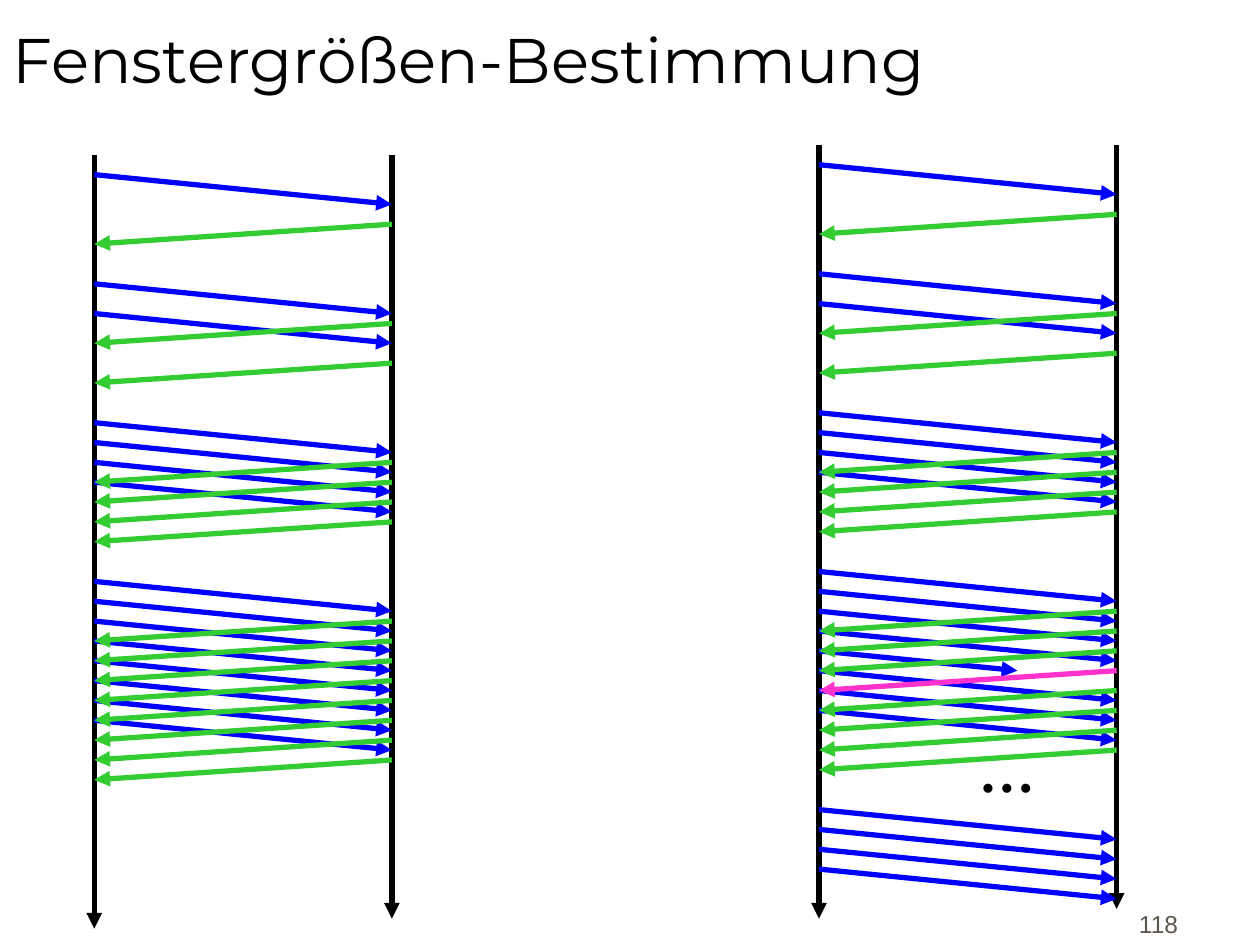
from dataclasses import dataclass

from lxml.etree import SubElement
from pptx import Presentation
from pptx.dml.color import RGBColor
from pptx.enum.shapes import MSO_CONNECTOR
from pptx.enum.text import MSO_ANCHOR, PP_ALIGN
from pptx.oxml.ns import qn
from pptx.util import Cm, Pt


@dataclass(frozen=True)
class Theme:
    black: RGBColor = RGBColor(0x00, 0x00, 0x00)
    data: RGBColor = RGBColor(0x00, 0x00, 0xFF)
    acknowledgement: RGBColor = RGBColor(0x33, 0xCC, 0x33)
    duplicate: RGBColor = RGBColor(0xFF, 0x33, 0xCC)
    number: RGBColor = RGBColor(0x5E, 0x57, 0x4E)
    title_size: Pt = Pt(36)
    ellipsis_size: Pt = Pt(32)
    number_size: Pt = Pt(14)
    line_width: Pt = Pt(3)


theme = Theme()


def add_arrow(shapes, start, end, color):
    arrow = shapes.add_connector(
        MSO_CONNECTOR.STRAIGHT, Cm(start[0]), Cm(start[1]), Cm(end[0]), Cm(end[1])
    )
    arrow.line.color.rgb = color
    arrow.line.width = theme.line_width
    SubElement(arrow.line._get_or_add_ln(), qn("a:tailEnd"), type="triangle")
    SubElement(arrow._element.spPr, qn("a:effectLst"))


def format_text(shape, text, font_name, size, color, alignment, anchor):
    frame = shape.text_frame
    frame.word_wrap = True
    frame.vertical_anchor = anchor
    paragraph = frame.paragraphs[0]
    paragraph.text = text
    paragraph.alignment = alignment
    paragraph.font.name = font_name
    paragraph.font.size = size
    paragraph.font.color.rgb = color
    return paragraph


presentation = Presentation()
presentation.slide_width = Cm(25.4)
presentation.slide_height = Cm(19.05)
slide = presentation.slides.add_slide(presentation.slide_layouts[5])

title = slide.shapes.title
title.left, title.top, title.width, title.height = Cm(0), Cm(0), Cm(25.4), Cm(3.53)
format_text(title, "Fenstergrößen-Bestimmung", "Montserrat", theme.title_size,
            theme.black, PP_ALIGN.LEFT, MSO_ANCHOR.BOTTOM)
title.text_frame.margin_bottom = Cm(1.6)

channel_width = 6
packet_gap = 0.4
data_drop = 0.6
acknowledgement_drop = 0.4
bursts = [
    ([0.4], [1.4]),
    ([2.6, 3.2], [3.4, 4.2]),
    ([5.4 + packet_gap * i for i in range(4)], [6.2 + packet_gap * i for i in range(4)]),
    ([8.6 + packet_gap * i for i in range(8)], [9.4 + packet_gap * i for i in range(8)]),
]
restart = ([13.4 + packet_gap * i for i in range(4)], [])
lost_packet = (3, 4)
duplicate_acknowledgement = (3, 3)

panels = [
    (slide.shapes, 16.51, 2.92, bursts + [restart], True),
    (slide.shapes.add_group_shape().shapes, 1.9, 3.12, bursts, False),
]
for shapes, sender, top, panel_bursts, has_loss in panels:
    receiver = sender + channel_width
    add_arrow(shapes, (sender, top), (sender, top + 15.6), theme.black)
    add_arrow(shapes, (receiver, top), (receiver, top + 15.4), theme.black)
    for burst, (packets, acknowledgements) in enumerate(panel_bursts):
        for index, offset in enumerate(packets):
            start = top + offset
            end = (receiver, start + data_drop)
            if has_loss and (burst, index) == lost_packet:
                end = (sender + 4, start + 0.4)
            add_arrow(shapes, (sender, start), end, theme.data)
        for index, offset in enumerate(acknowledgements):
            start = top + offset
            color = theme.acknowledgement
            if has_loss and (burst, index) == duplicate_acknowledgement:
                color = theme.duplicate
            add_arrow(shapes, (receiver, start), (sender, start + acknowledgement_drop), color)

ellipsis = slide.shapes.add_textbox(Cm(19.3), Cm(14.73), Cm(2), Cm(1.6))
paragraph = format_text(ellipsis, "…", "Times New Roman", theme.ellipsis_size,
                        theme.black, PP_ALIGN.CENTER, MSO_ANCHOR.MIDDLE)
paragraph.font.bold = True

page_number = slide.shapes.add_textbox(Cm(21.51), Cm(17.78), Cm(2.49), Cm(1.27))
format_text(page_number, "118", "Arial", theme.number_size,
            theme.number, PP_ALIGN.RIGHT, MSO_ANCHOR.BOTTOM)

presentation.save("out.pptx")
